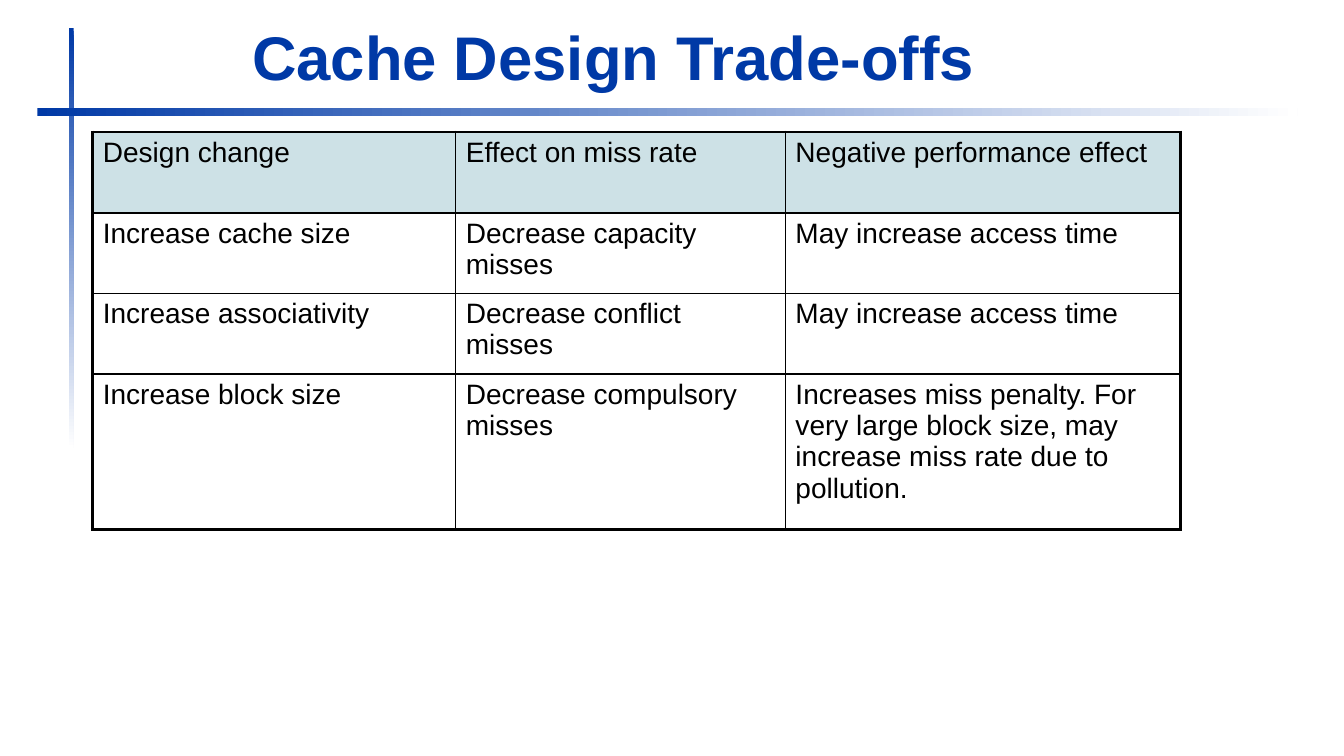
from dataclasses import dataclass

from lxml import etree
from pptx import Presentation
from pptx.dml.color import RGBColor
from pptx.enum.shapes import MSO_SHAPE
from pptx.enum.text import MSO_ANCHOR, MSO_AUTO_SIZE, PP_ALIGN
from pptx.oxml.ns import qn
from pptx.slide import Slide
from pptx.table import _Cell
from pptx.util import Inches, Pt

RECTANGLE = MSO_SHAPE.RECTANGLE
BOTTOM = MSO_ANCHOR.BOTTOM
NO_AUTO_SIZE = MSO_AUTO_SIZE.NONE
LEFT = PP_ALIGN.LEFT

FONT = "Arial"
BLUE = RGBColor(0x00, 0x39, 0xA6)
WHITE = RGBColor(0xFF, 0xFF, 0xFF)
BLACK = RGBColor(0x00, 0x00, 0x00)
HEADER_FILL = RGBColor(0xCD, 0xE1, 0xE6)

OUTER_BORDER, HEADER_BORDER, INNER_BORDER = Pt(2.25), Pt(1.5), Pt(1)


@dataclass(frozen=True)
class FadingBar:
    left: float
    top: float
    width: float
    height: float
    angle: int


BARS = [
    FadingBar(0.68, 0.28, 0.05, 4.17, 270),
    FadingBar(0.37, 1.07, 12.5, 0.08, 0),
]

COLUMN_WIDTHS = [3.6, 3.27, 3.92]
ROW_HEIGHTS = [0.8, 0.8, 0.8, 1.54]
TRADE_OFFS = [
    ("Design change", "Effect on miss rate", "Negative performance effect"),
    ("Increase cache size", "Decrease capacity misses", "May increase access time"),
    ("Increase associativity", "Decrease conflict misses", "May increase access time"),
    (
        "Increase block size",
        "Decrease compulsory misses",
        "Increases miss penalty. For very large block size, may increase "
        "miss rate due to pollution.",
    ),
]


def add_fading_bar(slide: Slide, bar: FadingBar) -> None:
    shape = slide.shapes.add_shape(
        RECTANGLE, Inches(bar.left), Inches(bar.top), Inches(bar.width), Inches(bar.height)
    )
    shape.shadow.inherit = False
    shape.line.fill.background()
    shape.fill.gradient()
    shape.fill.gradient_angle = bar.angle
    for stop, color in zip(shape.fill.gradient_stops, (BLUE, WHITE)):
        stop.color.rgb = color


def set_title(slide: Slide, text: str) -> None:
    title = slide.shapes.title
    title.left, title.top = Inches(2.4), Inches(0.13)
    title.width, title.height = Inches(8.52), Inches(0.84)
    frame = title.text_frame
    frame.text = text
    frame.word_wrap = True
    frame.auto_size = NO_AUTO_SIZE
    frame.vertical_anchor = BOTTOM
    paragraph = frame.paragraphs[0]
    paragraph.alignment = LEFT
    font = paragraph.runs[0].font
    font.name, font.size, font.bold = FONT, Pt(44), True
    font.color.rgb = BLUE


def set_borders(cell: _Cell, row: int, column: int) -> None:
    """Draw a heavy outer frame, a medium rule under the header and thin inner rules."""
    last_row, last_column = len(ROW_HEIGHTS) - 1, len(COLUMN_WIDTHS) - 1
    horizontal = [OUTER_BORDER, HEADER_BORDER] + [INNER_BORDER] * (last_row - 1) + [OUTER_BORDER]
    vertical = [OUTER_BORDER] + [INNER_BORDER] * last_column + [OUTER_BORDER]
    widths = {
        "a:lnL": vertical[column],
        "a:lnR": vertical[column + 1],
        "a:lnT": horizontal[row],
        "a:lnB": horizontal[row + 1],
    }
    properties = cell._tc.get_or_add_tcPr()
    for position, (tag, width) in enumerate(widths.items()):
        line = etree.Element(qn(tag), w=str(int(width)))
        fill = etree.SubElement(line, qn("a:solidFill"))
        etree.SubElement(fill, qn("a:srgbClr"), val=str(BLACK))
        properties.insert(position, line)


def fill_cell(cell: _Cell, text: str, is_header: bool) -> None:
    cell.text_frame.text = text
    font = cell.text_frame.paragraphs[0].runs[0].font
    font.name, font.size, font.bold = FONT, Pt(20), False
    font.color.rgb = BLACK
    if is_header:
        cell.fill.solid()
        cell.fill.fore_color.rgb = HEADER_FILL
    else:
        cell.fill.background()


def add_trade_off_table(slide: Slide) -> None:
    table = slide.shapes.add_table(
        len(ROW_HEIGHTS), len(COLUMN_WIDTHS), Inches(0.92), Inches(1.31),
        Inches(sum(COLUMN_WIDTHS)), Inches(sum(ROW_HEIGHTS)),
    ).table
    table.horz_banding = False
    for column, width in zip(table.columns, COLUMN_WIDTHS):
        column.width = Inches(width)
    for row, height in zip(table.rows, ROW_HEIGHTS):
        row.height = Inches(height)
    for row_index, texts in enumerate(TRADE_OFFS):
        for column_index, text in enumerate(texts):
            cell = table.cell(row_index, column_index)
            fill_cell(cell, text, is_header=row_index == 0)
            set_borders(cell, row_index, column_index)


def main() -> None:
    presentation = Presentation()
    presentation.slide_width, presentation.slide_height = Inches(13.33), Inches(7.5)
    title_only = presentation.slide_layouts.get_by_name("Title Only")
    slide = presentation.slides.add_slide(title_only)
    for bar in BARS:
        add_fading_bar(slide, bar)
    set_title(slide, "Cache Design Trade-offs")
    add_trade_off_table(slide)
    presentation.save("out.pptx")


if __name__ == "__main__":
    main()
